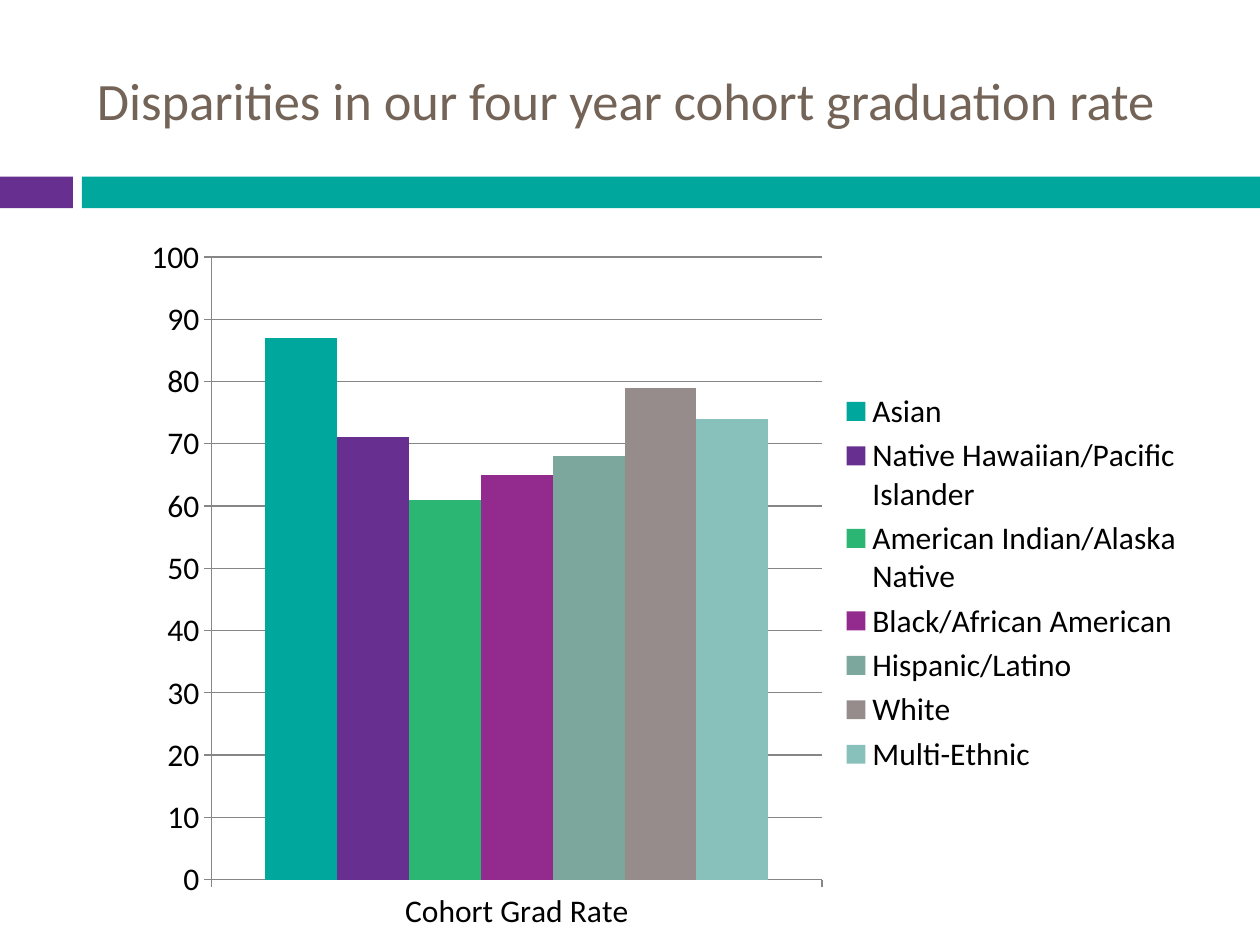
from dataclasses import dataclass

from lxml import etree
from pptx import Presentation
from pptx.chart.data import CategoryChartData
from pptx.dml.color import RGBColor
from pptx.enum import chart as ch, text
from pptx.oxml.ns import qn
from pptx.util import Cm, Pt


@dataclass(frozen=True)
class Theme:
    font: str = "Calibri"
    title_size: int = 30
    chart_size: int = 18
    title: str = "746458"
    body: str = "000000"
    grid: str = "868686"
    teal: str = "00A79D"
    purple: str = "673090"


@dataclass(frozen=True)
class Band:
    left: float
    width: float
    color: str


@dataclass(frozen=True)
class Group:
    name: str
    rate: int
    color: str


THEME = Theme()
BANDS = [Band(0, 1.47, THEME.purple), Band(1.65, 23.75, THEME.teal)]
GROUPS = [
    Group("Asian", 87, THEME.teal),
    Group("Native Hawaiian/Pacific Islander", 71, THEME.purple),
    Group("American Indian/Alaska Native", 61, "2CB673"),
    Group("Black/African American", 65, "932A8E"),
    Group("Hispanic/Latino", 68, "7BA79D"),
    Group("White", 79, "968C8C"),
    Group("Multi-Ethnic", 74, "88C0BB"),
]
PLOT_AREA = {"x": 0.08, "y": 0.05, "w": 0.57, "h": 0.86}


def apply(target, values: dict) -> None:
    for name, value in values.items():
        setattr(target, name, value)


def style_font(font, size: int, color: str) -> None:
    apply(font, {"name": THEME.font, "size": Pt(size), "bold": False})
    font.color.rgb = RGBColor.from_string(color)


def draw_band(slide, band: Band) -> None:
    stripe = slide.shapes.add_shape(1, Cm(band.left), Cm(3.56), Cm(band.width), Cm(0.64))
    stripe.shadow.inherit = False
    stripe.fill.solid()
    stripe.fill.fore_color.rgb = RGBColor.from_string(band.color)
    stripe.line.fill.background()


def write_title(slide, wording: str) -> None:
    title = slide.shapes.title
    apply(title, {"left": Cm(1.7), "top": Cm(0.64), "width": Cm(22.66), "height": Cm(2.74)})
    frame = title.text_frame
    frame.text = wording
    apply(frame, {"word_wrap": True, "vertical_anchor": text.MSO_ANCHOR.MIDDLE,
                  "auto_size": text.MSO_AUTO_SIZE.NONE})
    paragraph = frame.paragraphs[0]
    paragraph.alignment = text.PP_ALIGN.LEFT
    style_font(paragraph.runs[0].font, THEME.title_size, THEME.title)


def place_plot_area(chart) -> None:
    """Fix the inner plot area at fractions of the chart, leaving room for the legend."""
    plot_area = chart._chartSpace.chart.plotArea
    for automatic in plot_area.findall(qn("c:layout")):
        plot_area.remove(automatic)
    layout = etree.Element(qn("c:layout"))
    manual = etree.SubElement(layout, qn("c:manualLayout"))
    settings = {"layoutTarget": "inner", "xMode": "edge", "yMode": "edge", **PLOT_AREA}
    for tag, value in settings.items():
        etree.SubElement(manual, qn(f"c:{tag}")).set("val", str(value))
    plot_area.insert(0, layout)


def draw_rates(slide, groups: list[Group]) -> None:
    rates = CategoryChartData()
    rates.categories = ["Cohort Grad Rate"]
    for group in groups:
        rates.add_series(group.name, [group.rate])
    chart = slide.shapes.add_chart(ch.XL_CHART_TYPE.COLUMN_CLUSTERED, Cm(2.54), Cm(4.45),
                                   Cm(21.59), Cm(14.6), rates).chart
    apply(chart, {"has_title": False, "has_legend": True})
    style_font(chart.font, THEME.chart_size, THEME.body)
    apply(chart.legend, {"position": ch.XL_LEGEND_POSITION.RIGHT, "include_in_layout": False})

    plot = chart.plots[0]
    apply(plot, {"gap_width": 150, "overlap": 0, "vary_by_categories": False})
    for series, group in zip(plot.series, groups):
        series.format.fill.solid()
        series.format.fill.fore_color.rgb = RGBColor.from_string(group.color)

    apply(chart.value_axis, {"minimum_scale": 0, "maximum_scale": 100, "major_unit": 10,
                             "has_major_gridlines": True})
    for axis in (chart.category_axis, chart.value_axis):
        axis.major_tick_mark = ch.XL_TICK_MARK.OUTSIDE
    for part in (chart.category_axis, chart.value_axis, chart.value_axis.major_gridlines):
        part.format.line.color.rgb = RGBColor.from_string(THEME.grid)
        part.format.line.width = Pt(0.75)
    place_plot_area(chart)


def main() -> None:
    deck = Presentation()
    apply(deck, {"slide_width": Cm(25.4), "slide_height": Cm(19.05)})
    slide = deck.slides.add_slide(deck.slide_layouts[5])
    for band in BANDS:
        draw_band(slide, band)
    write_title(slide, "Disparities in our four year cohort graduation rate")
    draw_rates(slide, GROUPS)
    deck.save("out.pptx")


if __name__ == "__main__":
    main()
